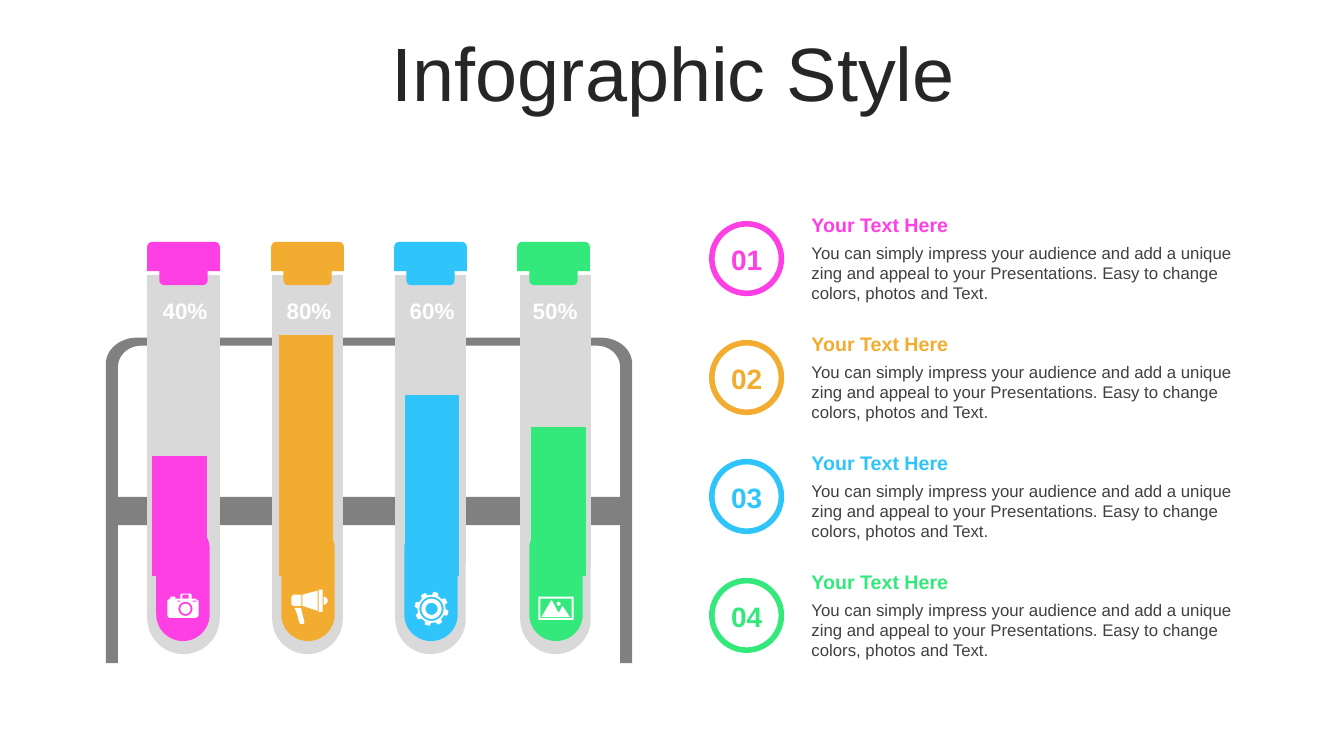
from math import cos, radians, sin

from lxml import etree
from pptx import Presentation
from pptx.chart.data import CategoryChartData
from pptx.dml.color import RGBColor
from pptx.enum.chart import XL_CHART_TYPE
from pptx.enum.shapes import MSO_SHAPE
from pptx.enum.text import MSO_ANCHOR, MSO_AUTO_SIZE, PP_ALIGN
from pptx.oxml.ns import qn
from pptx.util import Inches, Pt

COLUMNS = XL_CHART_TYPE.COLUMN_CLUSTERED
OVAL, ROUND_RECT = MSO_SHAPE.OVAL, MSO_SHAPE.ROUNDED_RECTANGLE
TOP, MIDDLE = MSO_ANCHOR.TOP, MSO_ANCHOR.MIDDLE
LEFT, CENTER = PP_ALIGN.LEFT, PP_ALIGN.CENTER
GROW, FIXED = MSO_AUTO_SIZE.SHAPE_TO_FIT_TEXT, MSO_AUTO_SIZE.NONE

PINK = RGBColor(0xFE, 0x3F, 0xE4)
ORANGE = RGBColor(0xF2, 0xAC, 0x30)
BLUE = RGBColor(0x2F, 0xC5, 0xFA)
GREEN = RGBColor(0x33, 0xE9, 0x7C)
WHITE = RGBColor(0xFF, 0xFF, 0xFF)
GLASS = RGBColor(0xD9, 0xD9, 0xD9)
RACK_GRAY = RGBColor(0x80, 0x80, 0x80)
TITLE_INK = RGBColor(0x26, 0x26, 0x26)
BODY_INK = RGBColor(0x40, 0x40, 0x40)
BLACK = RGBColor(0, 0, 0)
FONT = "Arial"

# Content
TITLE = "Infographic Style"
HEADING = "Your Text Here"
BODY = ("You can simply impress your audience and add a unique zing and appeal "
        "to your Presentations. Easy to change colors, photos and Text.")
# number, colour, percentage, bar value, cap left, tube left, tube width
ITEMS = [
    ("01", PINK, "40%", 50, 1.46, 1.46, 0.72),
    ("02", ORANGE, "80%", 100, 2.69, 2.70, 0.70),
    ("03", BLUE, "60%", 75, 3.91, 3.92, 0.70),
    ("04", GREEN, "50%", 62, 5.13, 5.16, 0.70),
]
ROW_PITCH = 1.18


# Outline helpers: every contour is a list of points in inches
def arc(cx, cy, rx, ry, start, end, steps=16):
    angles = [radians(start + (end - start) * i / steps) for i in range(steps + 1)]
    return [(cx + rx * cos(a), cy + ry * sin(a)) for a in angles]


def circle(cx, cy, radius):
    return arc(cx, cy, radius, radius, 0, 360, 40)


def rect(left, top, right, bottom):
    return [(left, top), (right, top), (right, bottom), (left, bottom)]


def tube_outline(left, width):
    radius = width / 2
    return [(left, 2.73), (left + width, 2.73)] + arc(
        left + radius, 6.49 - radius, radius, radius, 0, 180, 32)


def cap_outline(left):
    def corner(x, y, start):
        return arc(left + x, y, 0.05, 0.05, start, start + 90, 6)

    return (corner(0.05, 2.45, 180) + corner(0.67, 2.45, 270)
            + [(left + 0.72, 2.69), (left + 0.6, 2.69)]
            + corner(0.55, 2.78, 0) + corner(0.17, 2.78, 90)
            + [(left + 0.12, 2.69), (left, 2.69)])


def gear_outline(cx, cy, teeth=8):
    points = []
    for tooth in range(teeth):
        middle = 15 + tooth * 360 / teeth
        for turn, radius in ((-13, 0.14), (-8, 0.17), (8, 0.17), (13, 0.14)):
            angle = radians(middle + turn)
            points.append((cx + radius * sin(angle), cy - radius * cos(angle)))
    return points


RACK = [
    arc(1.36, 3.61, 0.31, 0.26, 180, 270) + arc(5.96, 3.61, 0.31, 0.26, 270, 360)
    + [(6.27, 6.58), (6.15, 6.58), (6.15, 5.21), (1.17, 5.21), (1.17, 6.58), (1.05, 6.58)],
    arc(1.4, 3.64, 0.23, 0.21, 180, 270) + arc(5.92, 3.64, 0.23, 0.21, 270, 360)
    + [(6.15, 4.93), (1.17, 4.93)],
]
CAMERA = [
    [(1.8, 5.89), (1.89, 5.89), (1.9, 5.9), (1.9, 5.94), (1.94, 5.94), (1.97, 5.96),
     (1.97, 6.11), (1.94, 6.13), (1.68, 6.13), (1.66, 6.11), (1.66, 5.96), (1.68, 5.94),
     (1.69, 5.94), (1.69, 5.92), (1.74, 5.92), (1.74, 5.94), (1.79, 5.94), (1.79, 5.9)],
    circle(1.84, 6.04, 0.07), circle(1.84, 6.04, 0.05),
    rect(1.76, 5.96, 1.79, 5.97), rect(1.91, 5.96, 1.95, 5.97), rect(1.81, 5.9, 1.87, 5.94),
]
MEGAPHONE = [
    [(2.99, 6.03), (2.99, 6.05), (3.02, 6.17), (3.01, 6.19), (2.98, 6.19), (2.97, 6.18),
     (2.94, 6.07), (2.92, 6.03)],
    arc(3.21, 5.96, 0.04, 0.04, -90, 90),
    [(2.91, 5.9), (2.99, 5.9), (2.99, 6.01), (2.91, 6.01), (2.89, 6.0), (2.89, 5.92)],
    [(3.15, 5.86), (3.15, 6.06), (3.0, 6.01), (3.0, 5.9)],
    rect(3.16, 5.85, 3.2, 6.07),
]
GEAR = [gear_outline(4.28, 6.04)] + [circle(4.28, 6.04, r) for r in (0.12, 0.1, 0.06)]
LANDSCAPE = [
    rect(5.34, 5.92, 5.69, 6.15), rect(5.36, 5.94, 5.67, 6.13), circle(5.54, 5.99, 0.02),
    [(5.47, 5.95), (5.54, 6.08), (5.58, 6.01), (5.65, 6.12), (5.37, 6.12)],
]

deck = Presentation()
deck.slide_width, deck.slide_height = Inches(13.33), Inches(7.5)
page = deck.slides.add_slide(deck.slide_layouts[5])


def paint(shape, color):
    shape.shadow.inherit = False
    shape.fill.solid()
    shape.fill.fore_color.rgb = color
    shape.line.fill.background()
    return shape


def draw(contours, color):
    moved = [[(Inches(x), Inches(y)) for x, y in contour] for contour in contours]
    builder = page.shapes.build_freeform(*moved[0][0])
    builder.add_line_segments(moved[0][1:])
    for contour in moved[1:]:
        builder.move_to(*contour[0])
        builder.add_line_segments(contour[1:])
    paint(builder.convert_to_shape(), color)


def add_preset(kind, left, top, width, height, color):
    return paint(page.shapes.add_shape(
        kind, Inches(left), Inches(top), Inches(width), Inches(height)), color)


def write(box, text, size, color, bold=False, align=LEFT, anchor=TOP, fit=GROW):
    frame = box.text_frame
    frame.word_wrap, frame.auto_size, frame.vertical_anchor = True, fit, anchor
    para = frame.paragraphs[0]
    para.alignment = align
    span = para.add_run()
    span.text = text
    span.font.name, span.font.size, span.font.bold = FONT, Pt(size), bold
    span.font.color.rgb = color
    return para


def add_text(left, top, width, height, *text, **style):
    box = page.shapes.add_textbox(Inches(left), Inches(top), Inches(width), Inches(height))
    write(box, *text, **style)


# Title
title = page.shapes.title
title.left, title.top, title.width, title.height = map(Inches, (0.35, 0.37, 12.66, 0.79))
write(title, TITLE, 54, TITLE_INK, align=CENTER, anchor=MIDDLE, fit=FIXED).line_spacing = 0.9

# Rack and test tubes
draw(RACK, RACK_GRAY)
for _, color, percent, _, cap_left, tube_left, tube_width in ITEMS:
    draw([tube_outline(tube_left, tube_width)], GLASS)
    add_preset(ROUND_RECT, tube_left + 0.09, 5.18, 0.53, 1.18, color).adjustments[0] = 0.5
    draw([cap_outline(cap_left)], color)
    add_text(cap_left - 0.04, 2.9, 0.83, 0.37, percent, 16, WHITE,
             bold=True, align=CENTER, anchor=MIDDLE)

# Liquid levels
levels = CategoryChartData()
levels.categories = [str(i + 1) for i in range(len(ITEMS))]
levels.add_series("Series 1", [item[3] for item in ITEMS])
chart = page.shapes.add_chart(
    COLUMNS, Inches(1.05), Inches(2.97), Inches(5.22), Inches(2.82), levels).chart
chart.has_legend = chart.has_title = False
chart.font.name, chart.font.size, chart.font.color.rgb = FONT, Pt(10), BLACK
chart.value_axis.minimum_scale, chart.value_axis.maximum_scale = 0, 100
chart.value_axis.has_major_gridlines = False
chart.value_axis.visible = chart.category_axis.visible = False
plot = chart.plots[0]
plot.gap_width, plot.overlap, plot.vary_by_categories = 132, 100, False
bars = plot.series[0]
bars.format.fill.solid()
bars.format.fill.fore_color.rgb = GREEN
for index, item in enumerate(ITEMS):
    fill = bars.points[index].format.fill
    fill.solid()
    fill.fore_color.rgb = item[1]

# Fixed plot area, as fractions of the chart frame
area = chart.element.find(".//" + qn("c:plotArea"))
for old_layout in area.findall(qn("c:layout")):
    area.remove(old_layout)
layout = etree.Element(qn("c:layout"))
manual = etree.SubElement(layout, qn("c:manualLayout"))
for tag, value in (("layoutTarget", "inner"), ("xMode", "edge"), ("yMode", "edge"),
                   ("x", "0.02"), ("y", "0.125"), ("w", "0.96"), ("h", "0.85")):
    etree.SubElement(manual, qn("c:" + tag)).set("val", value)
area.insert(0, layout)

# Numbered descriptions
for row, (number, color, *_) in enumerate(ITEMS):
    shift = row * ROW_PITCH
    ring = add_preset(OVAL, 7.06, 2.22 + shift, 0.69, 0.69, WHITE)
    ring.line.color.rgb, ring.line.width = color, Pt(4)
    add_text(7.13, 2.36 + shift, 0.55, 0.44, number, 20, color, bold=True, align=CENTER)
    add_text(7.95, 2.36 + shift, 4.5, 0.71, BODY, 12, BODY_INK)
    add_text(7.95, 2.06 + shift, 4.46, 0.34, HEADING, 14, color, bold=True)

# Icons
for icon in (CAMERA, MEGAPHONE, GEAR, LANDSCAPE):
    draw(icon, WHITE)

deck.save("out.pptx")
